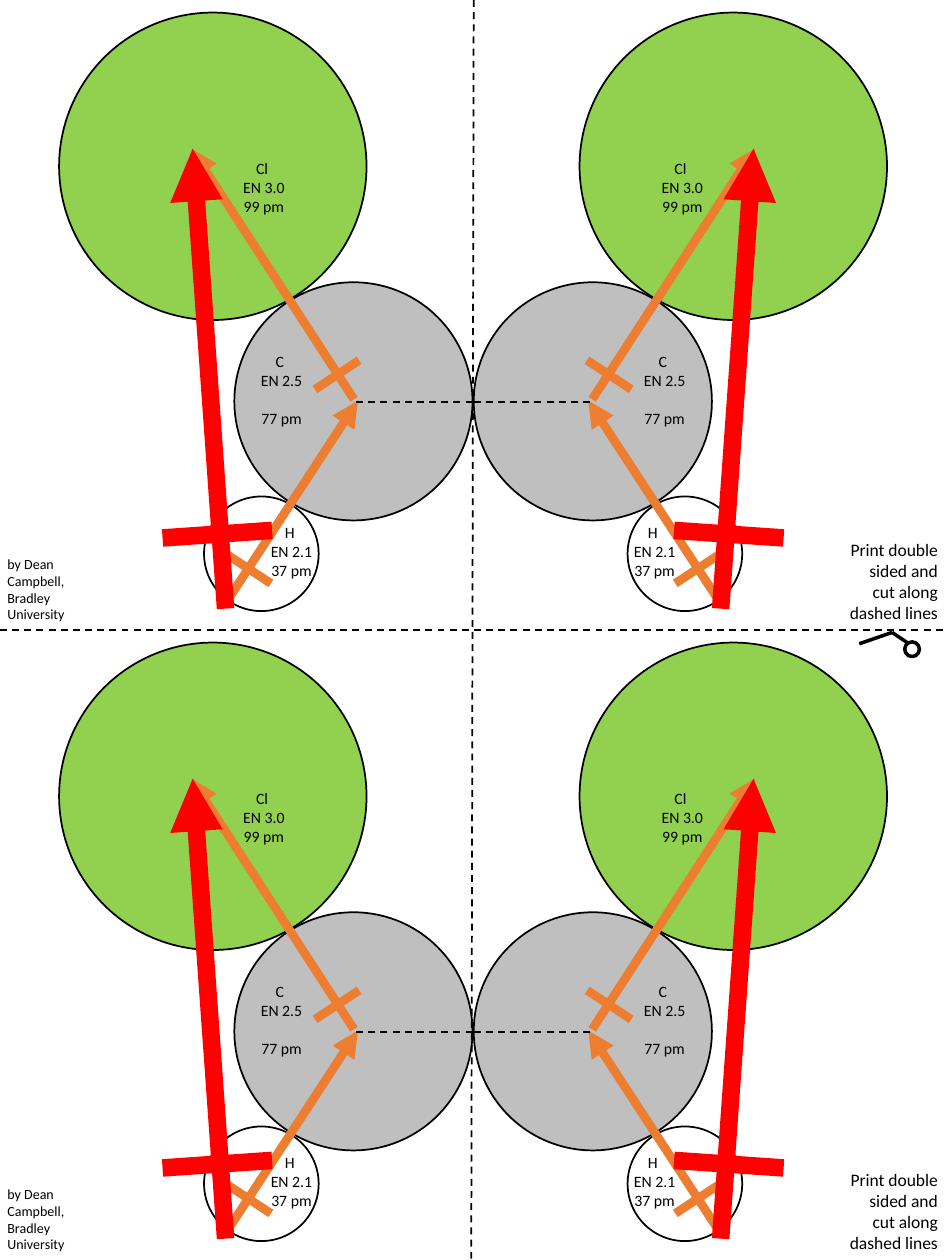
from typing import NamedTuple, Optional

from lxml.etree import SubElement
from pptx import Presentation
from pptx.dml.color import RGBColor
from pptx.enum.dml import MSO_LINE
from pptx.enum.shapes import MSO_CONNECTOR, MSO_SHAPE
from pptx.enum.text import MSO_AUTO_SIZE, PP_ALIGN
from pptx.oxml.ns import qn
from pptx.util import Pt

BLACK = RGBColor(0x00, 0x00, 0x00)
GRAY = RGBColor(0xBF, 0xBF, 0xBF)
GREEN = RGBColor(0x92, 0xD0, 0x50)
ORANGE = RGBColor(0xED, 0x7D, 0x31)
RED = RGBColor(0xFF, 0x00, 0x00)

FONT = "Calibri"
WIDTH, HEIGHT = 540, 720
HALF = HEIGHT / 2
MIRROR = 540.7  # x + mirrored x
LABEL_W = 38.2
LABEL_LINE = 11


class Atom(NamedTuple):
    x: float
    y: float
    size: float
    fill: Optional[RGBColor]


class Stroke(NamedTuple):
    x1: float
    y1: float
    x2: float
    y2: float
    color: RGBColor
    width: float
    arrow: bool = False
    dashed: bool = False


class Label(NamedTuple):
    x: float
    y: float
    lines: tuple
    gap: float = 0  # space before the last line


class Note(NamedTuple):
    x: float
    y: float
    h: float
    text: str
    size: float
    align: PP_ALIGN


# Right-hand molecule of the upper half; the others follow by reflection and shift
H_ATOM = Atom(358.6, 283.7, 65.5, None)
C_ATOM = Atom(270.7, 161.3, 136.1, GRAY)
CL_ATOM = Atom(331.2, 7.2, 175.7, GREEN)

H_TICK = Stroke(385.9, 333.4, 411.1, 316.8, ORANGE, 5)
DIPOLES = [
    Stroke(338.4, 228.2, 431.3, 85, ORANGE, 5, arrow=True),
    Stroke(410.4, 342.7, 336.2, 229, ORANGE, 5, arrow=True),
    Stroke(411.8, 347.8, 430.6, 85, RED, 10, arrow=True),
    Stroke(447.8, 307.4, 385.2, 303.1, RED, 10),
    Stroke(360.7, 222.5, 335.5, 205.9, ORANGE, 5),
    Stroke(270.7, 229.7, 338.4, 229.7, BLACK, 1, dashed=True),
]

C_LABEL = Label(360.7, 197.3, ("C ", "EN 2.5", "77 pm"), gap=LABEL_LINE)
CL_LABEL = Label(370.8, 87.1, ("Cl ", "EN 3.0", "99 pm"))
H_LABEL = Label(355, 295.2, ("H ", "EN 2.1", "37 pm"))

NOTES = [
    Note(477.4, 304.6, 55.4, "Print double sided and cut along dashed lines",
         10, PP_ALIGN.RIGHT),
    Note(-2.9, 313.9, 46.1, "by Dean Campbell, Bradley University",
         8, PP_ALIGN.LEFT),
]

CUT_ACROSS = Stroke(0, HALF, WIDTH, HALF, BLACK, 1, dashed=True)
CUT_DOWN = Stroke(270.7, 0, 269.3, HEIGHT, BLACK, 1, dashed=True)
SCISSOR_RING = Atom(517, 366.8, 8.4, None)
SCISSOR_BLADES = [
    Stroke(518.4, 367.2, 509.8, 361.4, BLACK, 2),
    Stroke(491, 367.9, 509.8, 361.4, BLACK, 2),
]


def draw_atom(shapes, atom: Atom, line_width: float = 1) -> None:
    sp = shapes.add_shape(MSO_SHAPE.OVAL, Pt(atom.x), Pt(atom.y),
                          Pt(atom.size), Pt(atom.size))
    sp.shadow.inherit = False
    if atom.fill is None:
        sp.fill.background()
    else:
        sp.fill.solid()
        sp.fill.fore_color.rgb = atom.fill
    sp.line.color.rgb = BLACK
    sp.line.width = Pt(line_width)


def draw_stroke(shapes, st: Stroke) -> None:
    cxn = shapes.add_connector(MSO_CONNECTOR.STRAIGHT, Pt(st.x1), Pt(st.y1),
                               Pt(st.x2), Pt(st.y2))
    cxn.line.color.rgb = st.color
    cxn.line.width = Pt(st.width)
    if st.dashed:
        cxn.line.dash_style = MSO_LINE.DASH
    if st.arrow:
        SubElement(cxn.line._get_or_add_ln(), qn("a:tailEnd"), type="triangle")
    SubElement(cxn._element.spPr, qn("a:effectLst"))


def draw_text(shapes, x: float, y: float, w: float, h: float, lines: tuple,
              size: float, align: PP_ALIGN, wrap: bool, gap: float = 0) -> None:
    tf = shapes.add_textbox(Pt(x), Pt(y), Pt(w), Pt(h)).text_frame
    tf.word_wrap = wrap
    tf.auto_size = MSO_AUTO_SIZE.SHAPE_TO_FIT_TEXT
    for i, line in enumerate(lines):
        p = tf.add_paragraph() if i else tf.paragraphs[0]
        p.alignment = align
        r = p.add_run()
        r.text = line
        r.font.name = FONT
        r.font.size = Pt(size)
        r.font.color.rgb = BLACK
    if gap:
        tf.paragraphs[-1].space_before = Pt(gap)


def draw_label(shapes, lb: Label) -> None:
    height = len(lb.lines) * LABEL_LINE + lb.gap + 7.2
    draw_text(shapes, lb.x, lb.y, LABEL_W, height, lb.lines, 9,
              PP_ALIGN.CENTER, False, lb.gap)


def place(item, dy: float, mirrored: bool):
    """Shift an atom, stroke or label down, and reflect it if asked."""
    if isinstance(item, Stroke):
        item = item._replace(y1=item.y1 + dy, y2=item.y2 + dy)
        if mirrored:
            item = item._replace(x1=MIRROR - item.x1, x2=MIRROR - item.x2)
        return item
    width = item.size if isinstance(item, Atom) else LABEL_W
    x = MIRROR - item.x - width if mirrored else item.x
    return item._replace(x=x, y=item.y + dy)


def draw_molecule(shapes, dy: float, mirrored: bool) -> None:
    painters = {Atom: draw_atom, Stroke: draw_stroke, Label: draw_label}
    for item in (H_ATOM, H_TICK, C_ATOM, CL_ATOM, C_LABEL, CL_LABEL,
                 *DIPOLES, H_LABEL):
        painters[type(item)](shapes, place(item, dy, mirrored))


def main() -> None:
    prs = Presentation()
    prs.slide_width, prs.slide_height = Pt(WIDTH), Pt(HEIGHT)
    s = prs.slides.add_slide(prs.slide_layouts[6])

    # Two mirrored molecules in each half
    for dy in (0, HALF):
        pair = s.shapes.add_group_shape()
        for mirrored in (False, True):
            draw_molecule(pair.shapes, dy, mirrored)

    # Cutting lines
    for cut in (CUT_ACROSS, CUT_DOWN):
        draw_stroke(s.shapes, cut)

    # Scissors
    scissors = s.shapes.add_group_shape()
    draw_atom(scissors.shapes, SCISSOR_RING, 2)
    for blade in SCISSOR_BLADES:
        draw_stroke(scissors.shapes, blade)

    # Instructions and credit
    for dy in (0, HALF):
        for n in NOTES:
            draw_text(s.shapes, n.x, n.y + dy, 65.5, n.h, (n.text,), n.size,
                      n.align, True)

    prs.save("out.pptx")


if __name__ == "__main__":
    main()
